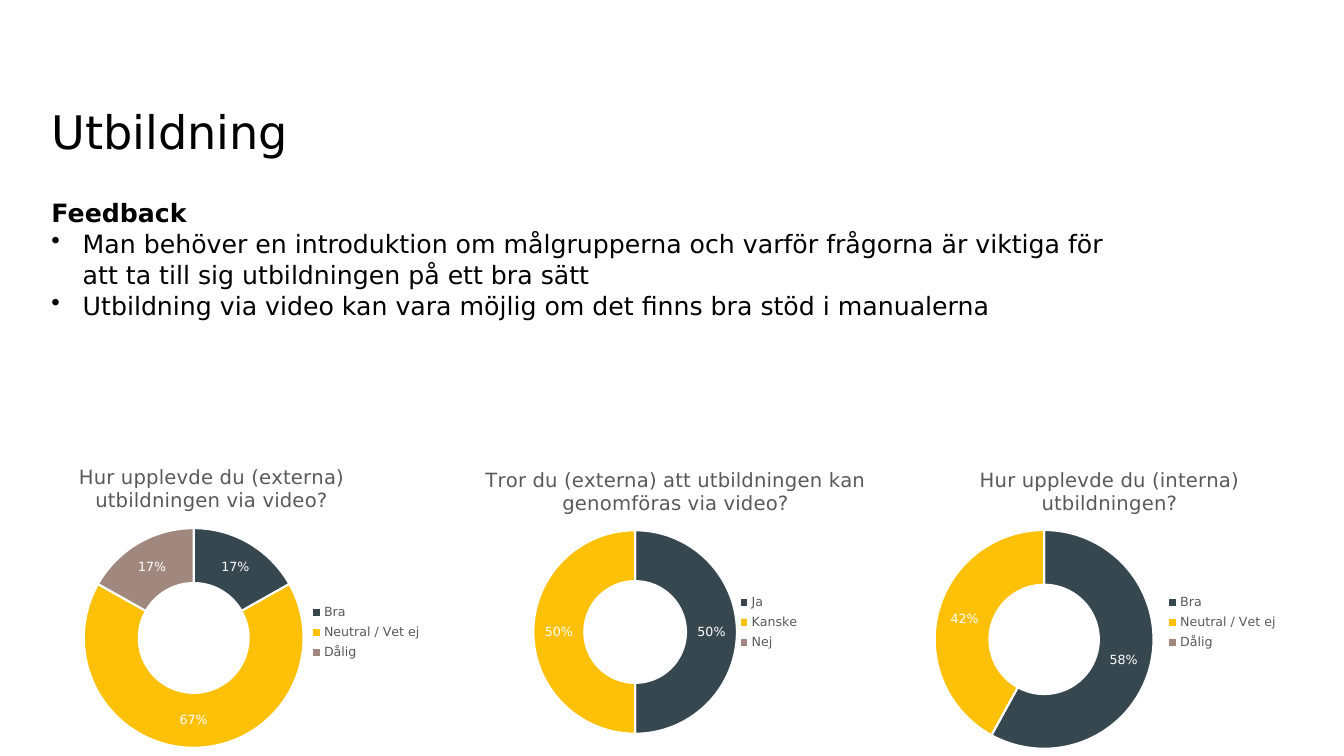
import pptx
import pptx.chart.data
import pptx.dml.color
import pptx.enum.chart
import pptx.enum.text
import pptx.oxml
import pptx.oxml.ns
import pptx.util


def color(value):
    return pptx.dml.color.RGBColor.from_string(value)


def add_bullet(para, indent):
    properties = para._p.get_or_add_pPr()
    properties.set("marL", str(indent))
    properties.set("indent", str(-indent))
    bullet = pptx.oxml.parse_xml(
        f'<a:buChar {pptx.oxml.ns.nsdecls("a")} char="•"/>')
    properties.append(bullet)


def set_layout(element, index, shares, inner=False):
    """Place a chart part by percentages of the chart: x, y and, if given, w, h."""
    for old in element.xpath("c:layout"):
        element.remove(old)
    target = '<c:layoutTarget val="inner"/>' if inner else ""
    modes = '<c:xMode val="edge"/><c:yMode val="edge"/>'
    sizes = "".join(f'<c:{key} val="{share / 100:.3f}"/>'
                    for key, share in zip("xywh", shares))
    element.insert(index, pptx.oxml.parse_xml(
        f'<c:layout {pptx.oxml.ns.nsdecls("c")}><c:manualLayout>'
        f'{target}{modes}{sizes}</c:manualLayout></c:layout>'))


class Page:
    FONT = "DejaVu Sans"
    INK, MUTED, WHITE = "000000", "595959", "FFFFFF"
    SLICES = ("37474F", "FFC107", "A1887F")

    def __init__(self, deck):
        self.deck = deck
        self.slide = deck.slides.add_slide(deck.slide_layouts[6])

    def place(self, left, top, width, height):
        """Turn percentages of the slide into lengths."""
        across, down = self.deck.slide_width, self.deck.slide_height
        return [int(share * full / 100) for share, full in
                zip((left, top, width, height), (across, down, across, down))]

    def style(self, font, size, ink, bold=False):
        font.name = self.FONT
        font.size = pptx.util.Pt(size)
        font.bold = bold
        font.color.rgb = color(ink)

    def text(self, area, lines, size, anchor, spacing=1.0):
        """Add a text box; each line is (text, bold, bulleted)."""
        box = self.slide.shapes.add_textbox(*self.place(*area))
        frame = box.text_frame
        frame.text = "\n".join(line[0] for line in lines)
        frame.word_wrap = True
        frame.vertical_anchor = anchor
        frame.margin_left = frame.margin_right = 0
        frame.margin_top = frame.margin_bottom = 0
        for para, (_, bold, bulleted) in zip(frame.paragraphs, lines):
            para.line_spacing = spacing
            self.style(para.runs[0].font, size, self.INK, bold)
            if bulleted:
                add_bullet(para, pptx.util.Inches(0.31))

    def doughnut(self, area, title, categories, values, title_at, ring, legend):
        data = pptx.chart.data.CategoryChartData()
        data.categories = categories
        data.add_series("Series 1", values)
        chart = self.slide.shapes.add_chart(
            pptx.enum.chart.XL_CHART_TYPE.DOUGHNUT, *self.place(*area), data).chart
        self.style(chart.font, 10, self.INK)

        chart.has_title = True
        frame = chart.chart_title.text_frame
        frame.text = title
        self.style(frame.paragraphs[0].runs[0].font, 14, self.MUTED)

        chart.has_legend = True
        chart.legend.position = pptx.enum.chart.XL_LEGEND_POSITION.RIGHT
        chart.legend.include_in_layout = False
        self.style(chart.legend.font, 9, self.MUTED)

        plot = chart.plots[0]
        plot.vary_by_categories = True
        series = plot.series[0]
        for index, fill in enumerate(self.SLICES):
            part = series.points[index].format
            part.fill.solid()
            part.fill.fore_color.rgb = color(fill)
            part.line.color.rgb = color(self.WHITE)
            part.line.width = pptx.util.Pt(1.5)
        labels = series.data_labels
        labels.show_value = True
        labels.show_percentage = False
        labels.number_format = '0"%";;;'
        labels.number_format_is_linked = False
        self.style(labels.font, 9, self.WHITE)

        root = chart.element
        set_layout(root.xpath("c:chart/c:title")[0], 1, title_at)
        set_layout(root.xpath("c:chart/c:plotArea")[0], 0, ring, inner=True)
        set_layout(root.xpath("c:chart/c:legend")[0], 1, legend)


def main():
    deck = pptx.Presentation()
    deck.slide_width = pptx.util.Inches(13.33)
    deck.slide_height = pptx.util.Inches(7.5)
    page = Page(deck)
    anchors = pptx.enum.text.MSO_ANCHOR

    page.text((3.83, 5.73, 70.89, 15.33), [("Utbildning", False, False)],
              33, anchors.BOTTOM)
    page.text((3.83, 26, 78.39, 16.13), [
        ("Feedback", True, False),
        ("Man behöver en introduktion om målgrupperna och varför frågorna är "
         "viktiga för att ta till sig utbildningen på ett bra sätt", False, True),
        ("Utbildning via video kan vara möjlig om det finns bra stöd i manualerna",
         False, True),
    ], 18, anchors.TOP, spacing=1.03)

    ratings = ("Bra", "Neutral / Vet ej", "Dålig")
    page.doughnut((1.35, 59.07, 35.41, 42),
                  "Hur upplevde du (externa) utbildningen via video?",
                  ratings, (17, 67, 17), title_at=(12, 4),
                  ring=(13.8, 25.7, 46.2, 69.2), legend=(60.4, 48.3, 25.4, 20.6))
    page.doughnut((31.28, 59.07, 37.51, 40),
                  "Tror du (externa) att utbildningen kan genomföras via video?",
                  ("Ja", "Kanske", "Nej"), (50, 50, 0), title_at=(12.2, 5.4),
                  ring=(22.4, 27.7, 40.4, 67.3), legend=(62.6, 47.3, 13, 21.7))
    page.doughnut((64.59, 59.07, 35.41, 42),
                  "Hur upplevde du (interna) utbildningen?",
                  ratings, (58, 42, 0), title_at=(22.7, 5.2),
                  ring=(14, 26.3, 46, 68.9), legend=(61.7, 45.1, 25.4, 20.6))
    deck.save("out.pptx")


if __name__ == "__main__":
    main()
